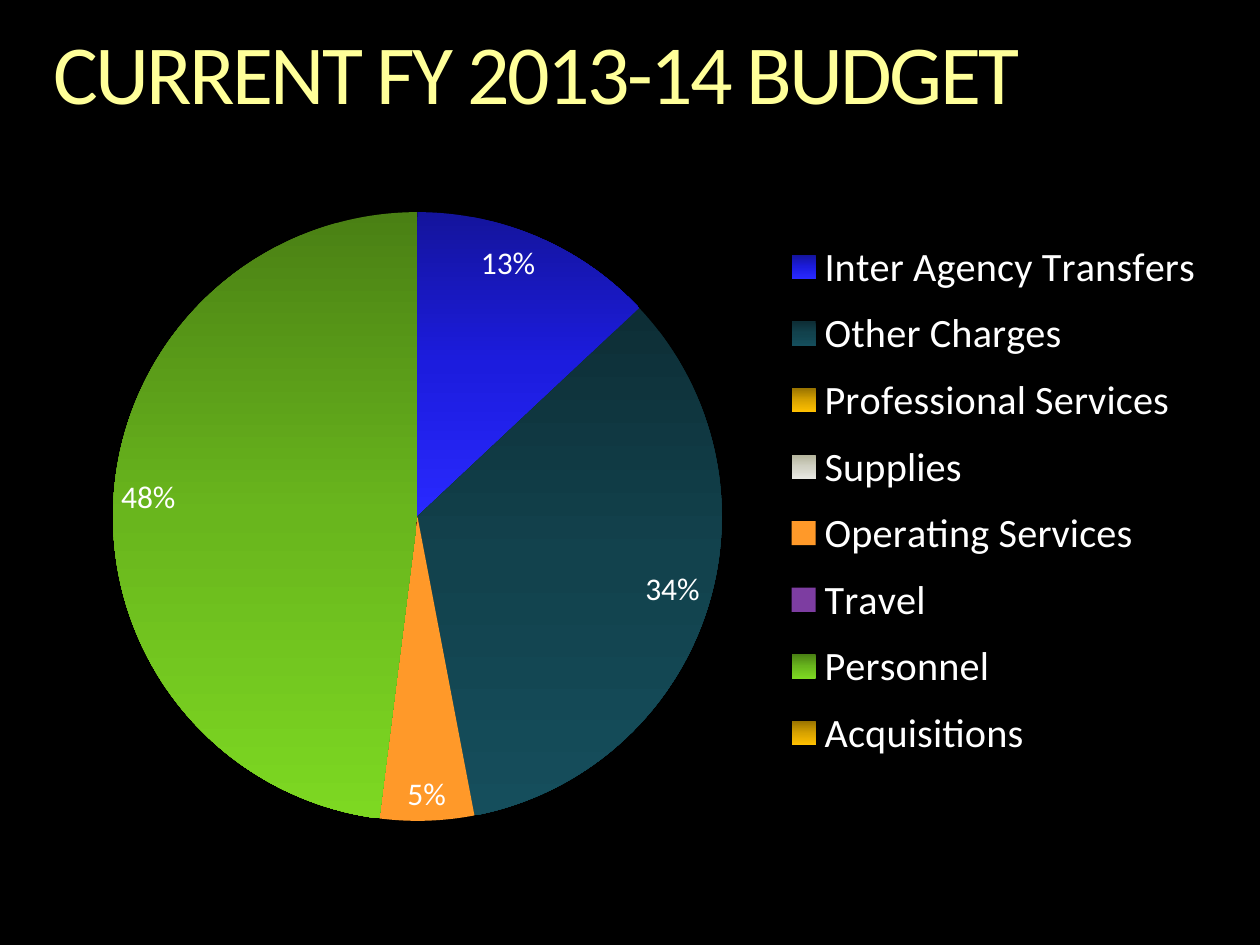
from copy import deepcopy
from lxml import etree
from pptx import Presentation
from pptx import util as u
from pptx.chart.data import CategoryChartData
from pptx.dml.color import RGBColor
from pptx.enum import chart as charts
from pptx.enum import text
from pptx.oxml import ns

TITLE = "CURRENT FY 2013-14 BUDGET"
GOLD = [(0, "977200"), (50, "D7A200"), (100, "FFC000")]
BUDGET = [
    ("Inter Agency Transfers", 13, [(0, "14149C"), (50, "1C1CDE"), (100, "2929FF")]),
    ("Other Charges", 34, [(0, "0D2E36"), (50, "12424D"), (100, "154E5C")]),
    ("Professional Services", 0, GOLD),
    ("Supplies", 0, [(0, "B4B49B"), (50, "D0D0C3"), (100, "E8E8E2")]),
    ("Operating Services", 5, "FF9929"),
    ("Travel", 0, "7D3DA1"),
    ("Personnel", 48, [(0, "4A8014"), (50, "69B61D"), (100, "7DD822")]),
    ("Acquisitions", 0, GOLD),
]
LABEL_SHIFTS = {"Professional Services": (0.09, -0.02), "Supplies": (0.02, -0.02),
                "Travel": (-0.06, -0.02)}
THEME = {
    "font": "Calibri", "background": "000000", "text": "FFFFFF",
    "title": [(0, "FFFFB9"), (36, "FFFF99"), (86, "F6AE1E")],
    "title_size": 48, "label_size": 18, "legend_size": 23,
}


def paint(fill, colour):
    """Fill with one colour, or with a top-to-bottom gradient of stops."""
    if isinstance(colour, str):
        fill.solid()
        fill.fore_color.rgb = RGBColor.from_string(colour)
        return
    fill.gradient()
    fill.gradient_angle = 270
    stop_list = fill._xPr.find(ns.qn("a:gradFill")).find(ns.qn("a:gsLst"))
    while len(stop_list) < len(colour):
        stop_list.append(deepcopy(stop_list[0]))
    for stop, (position, rgb) in zip(fill.gradient_stops, colour):
        stop.position = position / 100
        stop.color.rgb = RGBColor.from_string(rgb)


def style(font, size):
    """Set the theme typeface, text colour and a size."""
    font.name, font.size = THEME["font"], u.Pt(size)
    paint(font.fill, THEME["text"])


def make_layout(**values):
    """Return a manual chart layout with the given settings."""
    layout = etree.Element(ns.qn("c:layout"))
    manual = etree.SubElement(layout, ns.qn("c:manualLayout"))
    for name, value in values.items():
        etree.SubElement(manual, ns.qn(f"c:{name}")).set("val", str(value))
    return layout


def put_layout(parent, layout, after=None):
    """Replace the layout of a chart part, placing it after a named child."""
    for old in parent.findall(ns.qn("c:layout")):
        parent.remove(old)
    index = parent.index(parent.find(ns.qn(after))) + 1 if after else 0
    parent.insert(index, layout)


def add_title(slide):
    """Add the slide heading."""
    shape = slide.shapes.add_textbox(u.Cm(1.07), u.Cm(0.64), u.Cm(23.29), u.Cm(1.85))
    frame = shape.text_frame
    frame.word_wrap = True
    frame.vertical_anchor = text.MSO_ANCHOR.TOP
    frame.margin_left = frame.margin_right = frame.margin_top = frame.margin_bottom = 0
    paragraph = frame.paragraphs[0]
    paragraph.line_spacing = 0.9
    run = paragraph.add_run()
    run.text = TITLE
    style(run.font, THEME["title_size"])
    paint(run.font.fill, THEME["title"])
    run.font._element.set("spc", "-150")


def add_labels(series):
    """Show percentages, inside large slices and outside empty ones."""
    labels = series.data_labels
    labels.show_value, labels.show_percentage = False, True
    labels.position = charts.XL_LABEL_POSITION.INSIDE_END
    style(labels.font, THEME["label_size"])
    for point, (name, value, _) in zip(series.points, BUDGET):
        if value == 0:
            point.data_label.position = charts.XL_LABEL_POSITION.OUTSIDE_END
    for label in labels._element.findall(ns.qn("c:dLbl")):
        label.find(ns.qn("c:showVal")).set("val", "0")
        label.find(ns.qn("c:showPercent")).set("val", "1")
        name = BUDGET[int(label.find(ns.qn("c:idx")).get("val"))][0]
        if name in LABEL_SHIFTS:
            x, y = LABEL_SHIFTS[name]
            put_layout(label, make_layout(x=x, y=y), "c:idx")


def add_budget_chart(slide):
    """Add the pie of budget shares with its legend."""
    data = CategoryChartData()
    data.categories = [name for name, _, _ in BUDGET]
    data.add_series("Series 1", [value for _, value, _ in BUDGET])
    chart = slide.shapes.add_chart(charts.XL_CHART_TYPE.PIE, u.Cm(0.64), u.Cm(3.61),
                                   u.Cm(23.93), u.Cm(13.34), data).chart
    chart.has_title = False
    style(chart.font, THEME["label_size"])
    chart.has_legend = True
    chart.legend.position = charts.XL_LEGEND_POSITION.RIGHT
    chart.legend.include_in_layout = False
    style(chart.legend.font, THEME["legend_size"])
    put_layout(chart.legend._element,
               make_layout(xMode="edge", yMode="edge", x=0.64, y=0.07, w=0.35, h=0.83),
               "c:legendPos")

    plot = chart.plots[0]
    plot.vary_by_categories = True
    put_layout(plot._element.getparent(),
               make_layout(layoutTarget="inner", xMode="edge", yMode="edge",
                           x=0.01, y=0.05, w=0.63, h=0.92))
    series = plot.series[0]
    for point, (_, _, colour) in zip(series.points, BUDGET):
        paint(point.format.fill, colour)
        point.format.line.fill.background()
    add_labels(series)


def main():
    """Build and save the budget slide."""
    presentation = Presentation()
    presentation.slide_width, presentation.slide_height = u.Cm(25.4), u.Cm(19.05)
    slide = presentation.slides.add_slide(presentation.slide_layouts[6])
    paint(slide.background.fill, THEME["background"])
    add_title(slide)
    add_budget_chart(slide)
    presentation.save("out.pptx")


if __name__ == "__main__":
    main()
